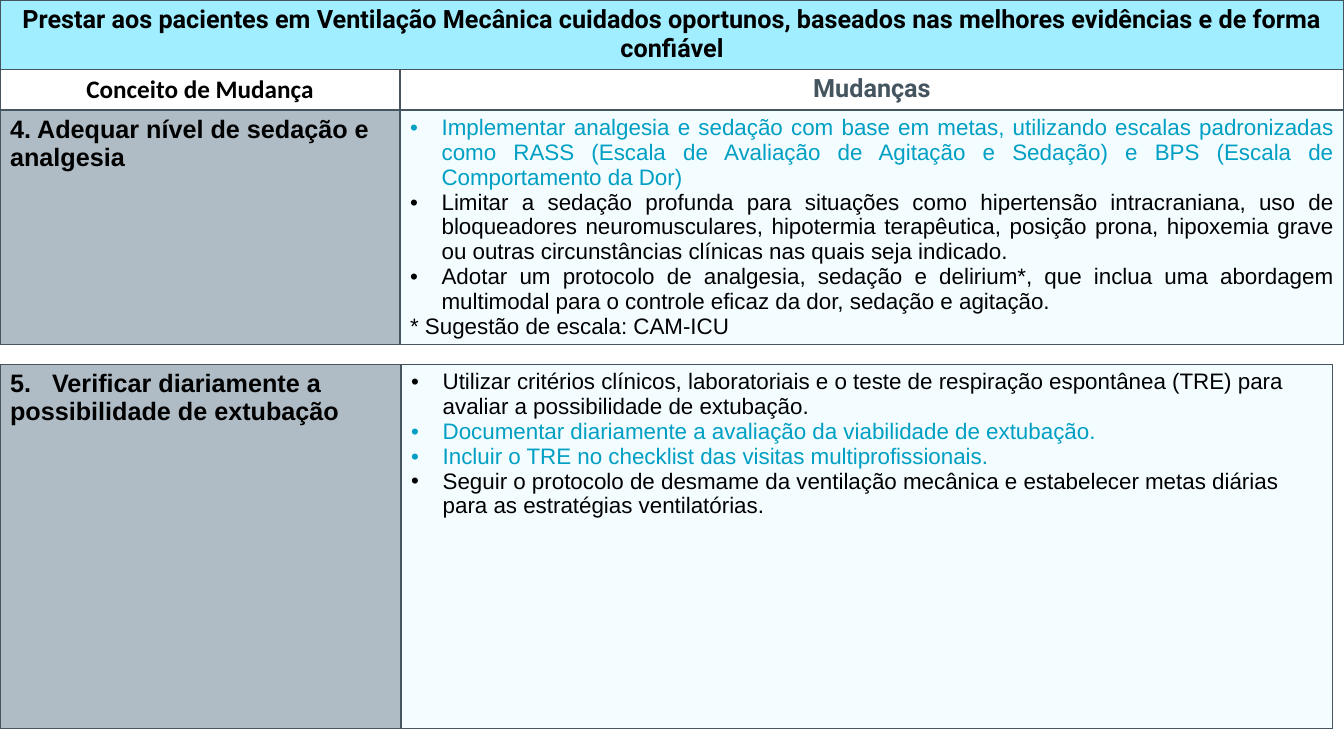
from pptx import Presentation
from pptx.dml.color import RGBColor
from pptx.enum.text import MSO_ANCHOR, PP_ALIGN
from pptx.oxml.ns import qn
from pptx.util import Pt
from lxml.etree import SubElement

SCALE = 9525
BLACK, SLATE, TEAL = "000000", "455560", "009FC3"
WHITE, CYAN, GRAY, PALE = "FFFFFF", "A0EEFF", "AFBCC5", "F3FCFF"
INDENT = 30

SEDATION = [
    ("Implementar analgesia e sedação com base em metas, utilizando escalas padronizadas como RASS (Escala de Avaliação de Agitação e Sedação) e BPS (Escala de Comportamento da Dor)", TEAL, True),
    ("Limitar a sedação profunda para situações como hipertensão intracraniana, uso de bloqueadores neuromusculares, hipotermia terapêutica, posição prona, hipoxemia grave ou outras circunstâncias clínicas nas quais seja indicado.", BLACK, True),
    ("Adotar um protocolo de analgesia, sedação e delirium*, que inclua uma abordagem multimodal para o controle eficaz da dor, sedação e agitação.", BLACK, True),
    ("* Sugestão de escala: CAM-ICU", BLACK, False),
]
WEANING = [
    ("Utilizar critérios clínicos, laboratoriais e o teste de respiração espontânea (TRE) para avaliar a possibilidade de extubação.", BLACK, True),
    ("Documentar diariamente a avaliação da viabilidade de extubação.", TEAL, True),
    ("Incluir o TRE no checklist das visitas multiprofissionais.", TEAL, True),
    ("Seguir o protocolo de desmame da ventilação mecânica e estabelecer metas diárias para as estratégias ventilatórias.", BLACK, True),
]


def px(n):
    return n * SCALE


def color(code):
    return RGBColor.from_string(code)


def paint(cell, fill):
    props = cell._tc.get_or_add_tcPr()
    for side in ("a:lnL", "a:lnR", "a:lnT", "a:lnB"):
        line = SubElement(props, qn(side), w=str(Pt(1)))
        solid = SubElement(line, qn("a:solidFill"))
        SubElement(solid, qn("a:srgbClr"), val=SLATE)
    cell.fill.solid()
    cell.fill.fore_color.rgb = color(fill)


def style(para, size, font, ink, bold, align):
    para.alignment = align
    for run in para.runs:
        run.font.size = Pt(size)
        run.font.name = font
        run.font.bold = bold
        run.font.color.rgb = color(ink)


def add_grid(slide, top, cols, rows):
    frame = slide.shapes.add_table(len(rows), len(cols), 0, px(top),
                                   px(sum(cols)), px(sum(rows)))
    grid = frame.table
    grid.first_row = grid.horz_banding = False
    for col, width in zip(grid.columns, cols):
        col.width = px(width)
    for row, height in zip(grid.rows, rows):
        row.height = px(height)
    return grid


def head(cell, text, fill, font="Arial", ink=BLACK, align=PP_ALIGN.CENTER):
    paint(cell, fill)
    cell.text_frame.text = text
    style(cell.text_frame.paragraphs[0], 18, font, ink, True, align)


def bullet(para):
    props = para._p.get_or_add_pPr()
    props.set("marL", str(px(INDENT)))
    props.set("indent", str(px(-INDENT)))
    SubElement(props, qn("a:buFont"), typeface="Arial")
    SubElement(props, qn("a:buChar"), char="•")


def add_tab(para, pos):
    tabs = SubElement(para._p.get_or_add_pPr(), qn("a:tabLst"))
    SubElement(tabs, qn("a:tab"), pos=str(px(pos)), algn="l")


def fill_list(cell, items, align):
    paint(cell, PALE)
    frame = cell.text_frame
    for i, (text, ink, dot) in enumerate(items):
        para = frame.add_paragraph() if i else frame.paragraphs[0]
        para.text = text
        if dot:
            bullet(para)
        style(para, 16, "Arial", ink, False, align)


def add_topic(slide, top, cols, height, title, items, align):
    grid = add_grid(slide, top, cols, [height])
    head(grid.cell(0, 0), title, GRAY, align=PP_ALIGN.LEFT)
    fill_list(grid.cell(0, 1), items, align)
    return grid


def add_header(slide, cols):
    grid = add_grid(slide, 0, cols, [65, 38])
    for cell in grid.iter_cells():
        cell.vertical_anchor = MSO_ANCHOR.MIDDLE
    goal = grid.cell(0, 0)
    goal.merge(grid.cell(0, 1))
    paint(grid.cell(0, 1), CYAN)
    goal.vertical_anchor = MSO_ANCHOR.TOP
    head(goal, "Prestar aos pacientes em Ventilação Mecânica cuidados oportunos, baseados nas melhores evidências e de forma confiável", CYAN, "Roboto")
    left = grid.cell(1, 0)
    left.margin_left = left.margin_right = left.margin_top = px(1)
    left.margin_bottom = 0
    head(left, "Conceito de Mudança", WHITE, "Calibri")
    head(grid.cell(1, 1), "Mudanças", WHITE, "Roboto", SLATE)


def main():
    deck = Presentation()
    deck.slide_width, deck.slide_height = px(1280), px(720)
    slide = deck.slides.add_slide(deck.slide_layouts[6])
    cols = [381, 899]
    add_header(slide, cols)
    add_topic(slide, 105, cols, 197, "4. Adequar nível de sedação e analgesia",
              SEDATION, PP_ALIGN.JUSTIFY)
    grid = add_topic(slide, 347, [382, 887], 347,
                     "5.\tVerificar diariamente a possibilidade de extubação",
                     WEANING, PP_ALIGN.LEFT)
    add_tab(grid.cell(0, 0).text_frame.paragraphs[0], 40)
    deck.save("out.pptx")


if __name__ == "__main__":
    main()
